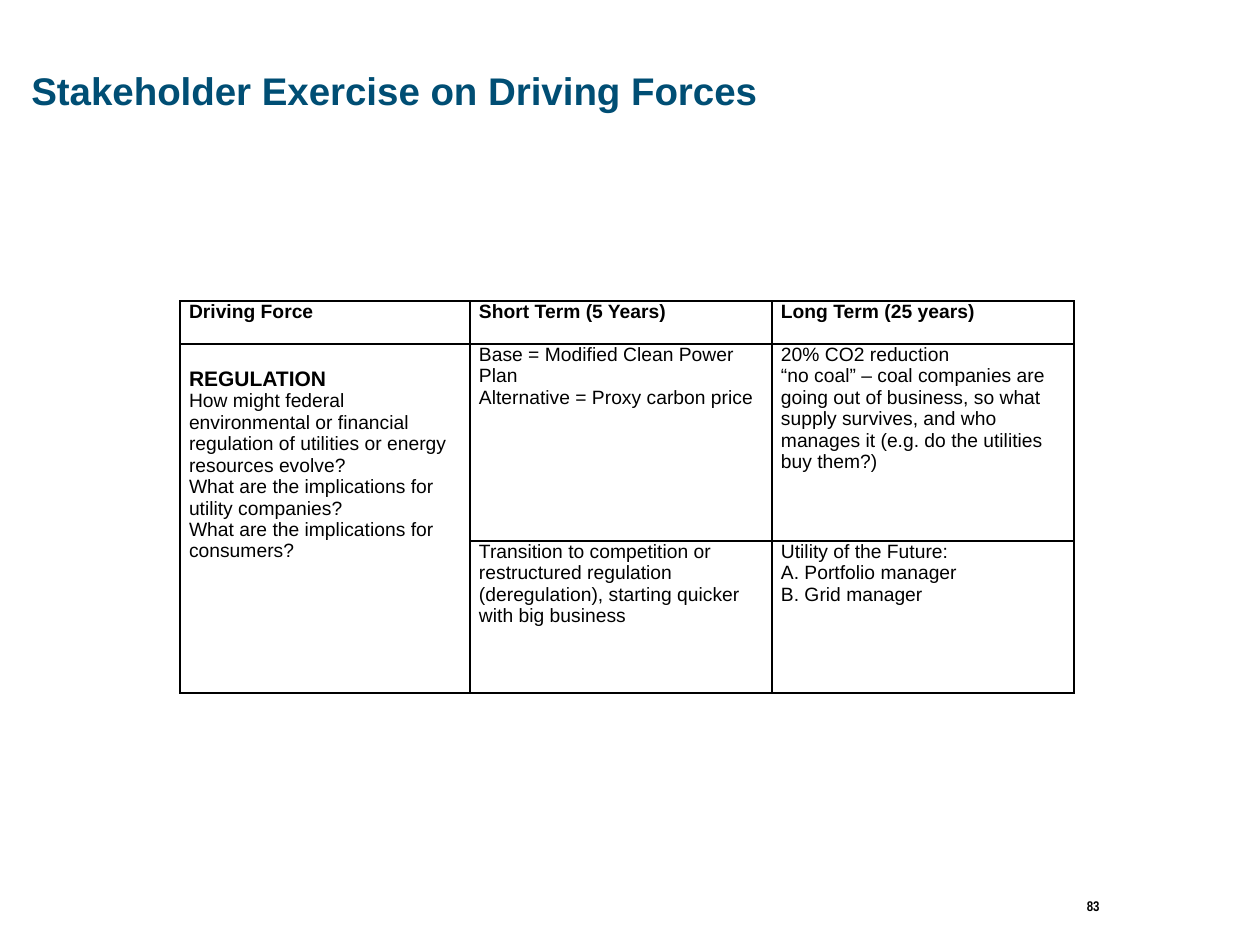
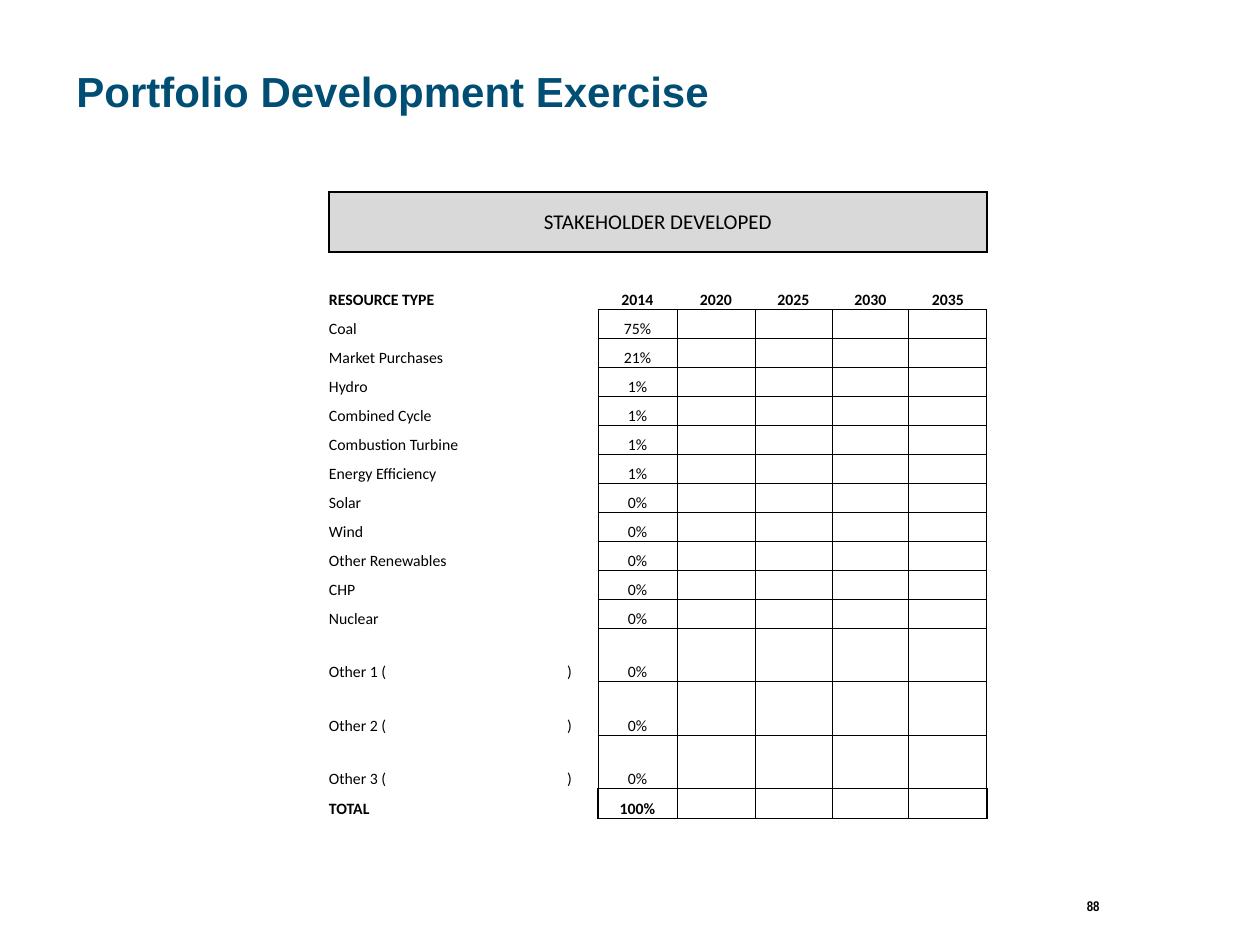
from lxml.etree import SubElement
from pptx import Presentation
from pptx.dml.color import RGBColor
from pptx.enum.text import MSO_ANCHOR, PP_ALIGN
from pptx.oxml.ns import qn
from pptx.util import Emu, Pt

COLORS = {"title": "004E74", "text": "000000", "line": "000000", "band": "D9D9D9"}
PX_PER_INCH = 126

FORCES = [
    ["Driving Force", "Short Term (5 Years)", "Long Term (25 years)"],
    ["REGULATION\n"
     "How might federal environmental or financial regulation of utilities "
     "or energy resources evolve?\n"
     "What are the implications for utility companies?\n"
     "What are the implications for consumers?",
     "Base = Modified Clean Power Plan\nAlternative = Proxy carbon price",
     "20% CO2 reduction\n"
     "“no coal” – coal companies are going out of business, so what supply "
     "survives, and who manages it (e.g. do the utilities buy them?)"],
    ["",
     "Transition to competition or restructured regulation (deregulation), "
     "starting quicker with big business",
     "Utility of the Future:\nA. Portfolio manager\nB. Grid manager"],
]

YEARS = ["2014", "2020", "2025", "2030", "2035"]
RESOURCES = [
    ("Coal", "75%"), ("Market Purchases", "21%"), ("Hydro", "1%"),
    ("Combined Cycle", "1%"), ("Combustion Turbine", "1%"),
    ("Energy Efficiency", "1%"), ("Solar", "0%"), ("Wind", "0%"),
    ("Other Renewables", "0%"), ("CHP", "0%"), ("Nuclear", "0%"),
    ("Other 1 (\t)", "0%"), ("Other 2 (\t)", "0%"), ("Other 3 (\t)", "0%"),
    ("TOTAL", "100%"),
]
BAND_ROW, YEAR_ROW = 1, 4
TOTAL_ROW = YEAR_ROW + len(RESOURCES)
NAME_COL, FIRST_YEAR_COL, COL_COUNT = 1, 2, 7


def px(n):
    return Emu(round(n * 914400 / PX_PER_INCH))


def color(name):
    return RGBColor.from_string(COLORS[name])


# Text
def format_text(p, font, size, bold=False, name="text", align=PP_ALIGN.LEFT):
    p.alignment = align
    for r in p.runs:
        r.font.name, r.font.size, r.font.bold = font, Pt(size), bold
        r.font.color.rgb = color(name)
    if not p.runs:
        # An empty cell keeps its row low only with a small end mark
        SubElement(p._p, qn("a:endParaRPr"), sz=str(size * 100))


def add_text(s, text, left, top, width, height):
    tf = s.shapes.add_textbox(px(left), px(top), px(width), px(height)).text_frame
    tf.word_wrap = True
    tf.text = text
    return tf


def add_title(s, text, box, size):
    tf = add_text(s, text, *box)
    tf.vertical_anchor = MSO_ANCHOR.MIDDLE
    p = tf.paragraphs[0]
    p.line_spacing = 0.85
    format_text(p, "Arial", size, True, "title")


def add_page_number(s, number):
    tf = add_text(s, str(number), 919, 891, 193, 54)
    format_text(tf.paragraphs[0], "Arial Narrow", 8, True, align=PP_ALIGN.RIGHT)


def add_tab_stop(p, position):
    tabs = SubElement(p._p.get_or_add_pPr(), qn("a:tabLst"))
    SubElement(tabs, qn("a:tab"), pos=str(px(position)), algn="l")


# Tables
def add_grid(s, left, top, widths, heights):
    table = s.shapes.add_table(len(heights), len(widths), px(left), px(top),
                               px(sum(widths)), px(sum(heights))).table
    table.first_row = table.horz_banding = False
    for column, width in zip(table.columns, widths):
        column.width = px(width)
    for row, height in zip(table.rows, heights):
        row.height = px(height)
    return table


def set_border(cell, side, width):
    ln = SubElement(cell._tc.get_or_add_tcPr(), qn(f"a:ln{side}"), w=str(Pt(width)))
    if width:
        fill = SubElement(ln, qn("a:solidFill"))
        SubElement(fill, qn("a:srgbClr"), val=COLORS["line"])
    else:
        SubElement(ln, qn("a:noFill"))


def style_cell(table, row, col, h_width, v_width, inset=0):
    """Set borders from the grid-line rules, clear the fill, set the margins."""
    cell = table.cell(row, col)
    bottom, right = row + 1, col + 1
    if cell.is_merge_origin:
        bottom, right = row + cell.span_height, col + cell.span_width
    set_border(cell, "L", v_width(row, col))
    set_border(cell, "R", v_width(row, right))
    set_border(cell, "T", h_width(row, col))
    set_border(cell, "B", h_width(bottom, col))
    cell.fill.background()
    cell.margin_left = cell.margin_right = px(inset)
    cell.margin_top = cell.margin_bottom = 0
    return cell


# Driving forces
def add_forces_table(s):
    def h_width(line, col):
        return 0 if (line, col) == (2, 0) else 1

    def v_width(row, line):
        return 1

    table = add_grid(s, 180, 301, [290, 302, 302], [43, 197, 152])
    table.cell(1, 0).merge(table.cell(2, 0))
    for i, texts in enumerate(FORCES):
        for j, text in enumerate(texts):
            cell = style_cell(table, i, j, h_width, v_width, inset=9)
            cell.text_frame.text = text
            for p in cell.text_frame.paragraphs:
                heading = p.text == "REGULATION"
                format_text(p, "Arial", 12 if heading else 11, heading or i == 0)
    table.cell(1, 0).margin_top = px(23)


# Portfolio
def portfolio_h_width(line, col):
    if col >= NAME_COL and line in (BAND_ROW, BAND_ROW + 2):
        return 1
    if col < FIRST_YEAR_COL or line <= YEAR_ROW:
        return 0
    return 1 if line >= TOTAL_ROW else 0.5


def portfolio_v_width(row, line):
    if row in (BAND_ROW, BAND_ROW + 1):
        return 1 if line in (NAME_COL, COL_COUNT) else 0
    if row <= YEAR_ROW or line < FIRST_YEAR_COL:
        return 0
    return 1 if row == TOTAL_ROW and line in (FIRST_YEAR_COL, COL_COUNT) else 0.5


def portfolio_texts():
    texts = {(BAND_ROW, NAME_COL): "STAKEHOLDER DEVELOPED",
             (YEAR_ROW, NAME_COL): "RESOURCE TYPE"}
    for j, year in enumerate(YEARS, FIRST_YEAR_COL):
        texts[YEAR_ROW, j] = year
    for i, (resource, share) in enumerate(RESOURCES, YEAR_ROW + 1):
        texts[i, NAME_COL] = resource
        texts[i, FIRST_YEAR_COL] = share
    return texts


def add_portfolio_table(s):
    heights = [24, 30, 30, 29, 29] + [29] * 11 + [53, 54, 53, 30]
    table = add_grid(s, 252, 168, [77, 269, 79, 78, 77, 77, 78], heights)
    band = table.cell(BAND_ROW, NAME_COL)
    band.merge(table.cell(BAND_ROW + 1, COL_COUNT - 1))
    texts = portfolio_texts()
    for i in range(len(heights)):
        for j in range(COL_COUNT):
            cell = style_cell(table, i, j, portfolio_h_width, portfolio_v_width)
            cell.vertical_anchor = MSO_ANCHOR.BOTTOM
            text = texts.get((i, j), "")
            cell.text_frame.text = text
            p = cell.text_frame.paragraphs[0]
            if "\t" in text:
                add_tab_stop(p, 238)
            format_text(p, "Calibri", 9, i in (YEAR_ROW, TOTAL_ROW),
                        align=PP_ALIGN.CENTER if j >= FIRST_YEAR_COL else PP_ALIGN.LEFT)
    band.fill.solid()
    band.fill.fore_color.rgb = color("band")
    band.vertical_anchor = MSO_ANCHOR.MIDDLE
    format_text(band.text_frame.paragraphs[0], "Calibri", 12, align=PP_ALIGN.CENTER)


def main():
    prs = Presentation()
    prs.slide_width, prs.slide_height = px(1260), px(945)
    blank = prs.slide_layouts[6]

    s = prs.slides.add_slide(blank)
    add_title(s, "Stakeholder Exercise on Driving Forces", (19, 24, 796, 139), 22)
    add_forces_table(s)
    add_page_number(s, 83)

    s = prs.slides.add_slide(blank)
    add_title(s, "Portfolio Development Exercise", (64, 21, 751, 147), 24)
    add_portfolio_table(s)
    add_page_number(s, 88)

    prs.save("out.pptx")


if __name__ == "__main__":
    main()
